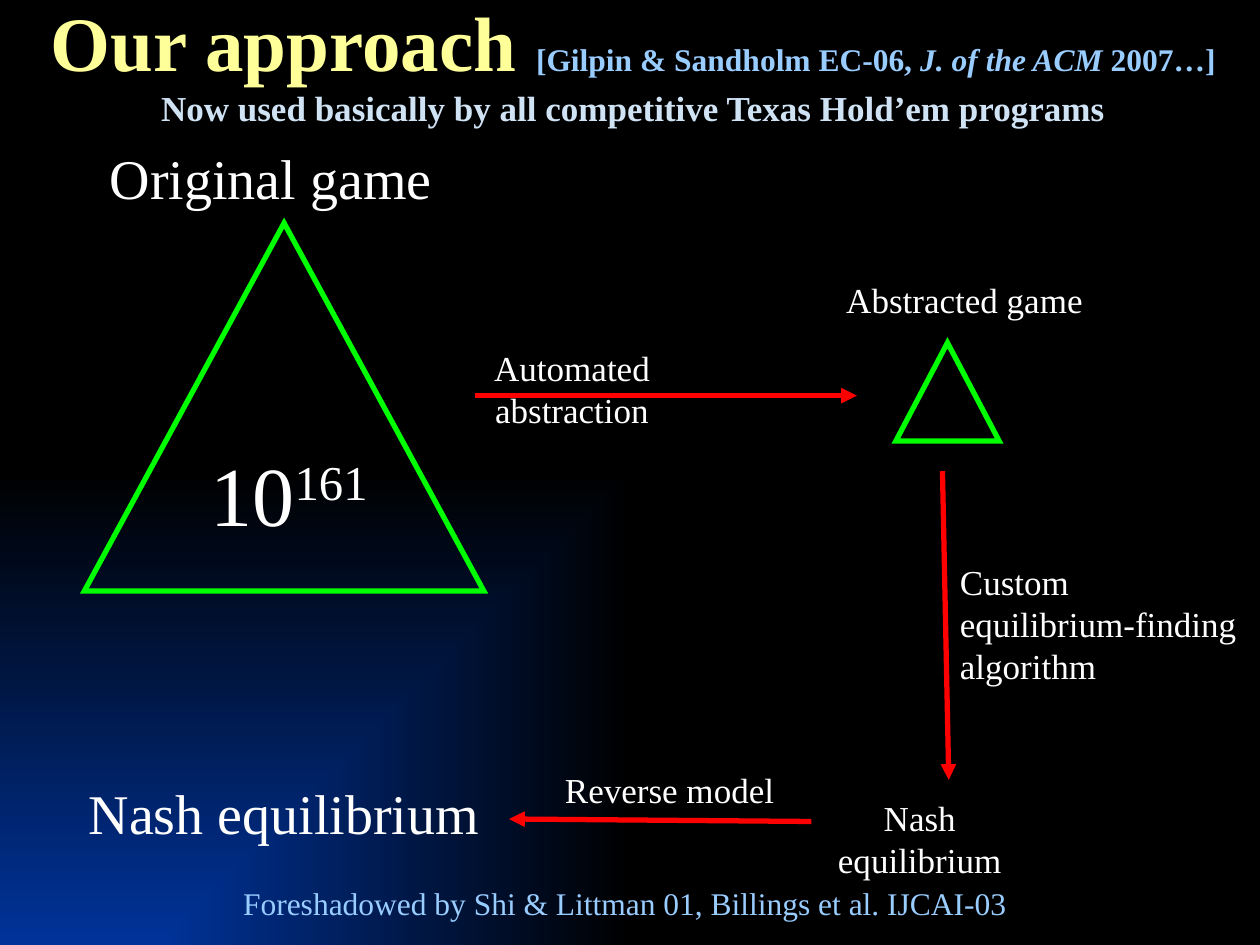
from lxml.etree import SubElement
from pptx import Presentation
from pptx.dml.color import RGBColor
from pptx.enum.shapes import MSO_CONNECTOR, MSO_SHAPE
from pptx.enum.text import MSO_ANCHOR, MSO_AUTO_SIZE, PP_ALIGN
from pptx.oxml.ns import qn
from pptx.util import Inches, Pt

FONT = "Times New Roman"
COLORS = {
    "navy": "003399",
    "black": "000000",
    "white": "FFFFFF",
    "title": "FFFF99",
    "citation": "99CCFF",
    "subtitle": "D0E3F5",
    "game": "00FF00",
    "arrow": "FF0000",
}


def rgb(name):
    return RGBColor.from_string(COLORS[name])


def set_font(font, size, color, bold=False):
    font.name = FONT
    font.size = Pt(size)
    font.bold = bold
    font.color.rgb = rgb(color)


def set_background(slide):
    fill = slide.background.fill
    fill.gradient()
    for stop, color, position in zip(fill.gradient_stops, ("navy", "black"), (0, 1)):
        stop.color.rgb = rgb(color)
        stop.position = position
    gradient = slide._element.find(".//" + qn("a:gradFill"))
    gradient.remove(gradient.find(qn("a:lin")))
    shade = SubElement(gradient, qn("a:path"), path="rect")
    SubElement(shade, qn("a:fillToRect"), t="100000", r="100000")


def add_title(slide):
    frame = slide.shapes.add_textbox(
        Inches(0.25), Inches(0.08), Inches(9.55), Inches(0.82)
    ).text_frame
    frame.word_wrap = True
    frame.vertical_anchor = MSO_ANCHOR.MIDDLE
    paragraph = frame.paragraphs[0]
    paragraph.alignment = PP_ALIGN.CENTER
    pieces = [
        ("Our approach ", 44, "title", False),
        ("[Gilpin & Sandholm EC-06, ", 18, "citation", False),
        ("J. of the ACM ", 18, "citation", True),
        ("2007…]", 18, "citation", False),
        ("Now used basically by all competitive Texas Hold’em programs", 20, "subtitle", False),
    ]
    for text, size, color, italic in pieces:
        if color == "subtitle":
            paragraph.add_line_break()
        run = paragraph.add_run()
        run.text = text
        set_font(run.font, size, color, bold=True)
        run.font.italic = italic


def add_label(slide, text, box, size=20, color="white", align=PP_ALIGN.CENTER, wrap=False):
    frame = slide.shapes.add_textbox(*map(Inches, box)).text_frame
    frame.text = text
    frame.word_wrap = wrap
    frame.auto_size = MSO_AUTO_SIZE.SHAPE_TO_FIT_TEXT
    for paragraph in frame.paragraphs:
        paragraph.alignment = align
        set_font(paragraph.font, size, color)
    return frame


def add_game_size(slide):
    frame = add_label(slide, "10", (1.52, 3.46, 1.55, 0.91), size=48)
    exponent = frame.paragraphs[0].add_run()
    exponent.text = "161"
    exponent.font._element.set("baseline", "30000")


def add_game_triangle(slide, box):
    shape = slide.shapes.add_shape(MSO_SHAPE.ISOSCELES_TRIANGLE, *map(Inches, box))
    shape.shadow.inherit = False
    shape.fill.background()
    shape.line.color.rgb = rgb("game")
    shape.line.width = Pt(3)
    SubElement(shape.line._get_or_add_ln(), qn("a:miter"), lim="800000")


def add_arrow(slide, start, end):
    connector = slide.shapes.add_connector(
        MSO_CONNECTOR.STRAIGHT, *map(Inches, start + end)
    )
    connector.line.color.rgb = rgb("arrow")
    connector.line.width = Pt(3)
    SubElement(connector.line._get_or_add_ln(), qn("a:tailEnd"), type="triangle")
    SubElement(connector._element.spPr, qn("a:effectLst"))


def main():
    presentation = Presentation()
    presentation.slide_width = Inches(10)
    presentation.slide_height = Inches(7.5)
    slide = presentation.slides.add_slide(presentation.slide_layouts[6])
    set_background(slide)
    add_title(slide)

    add_game_triangle(slide, (0.67, 1.77, 3.17, 2.92))
    add_game_triangle(slide, (7.11, 2.72, 0.82, 0.78))

    add_label(slide, "Original game", (0.77, 1.09, 2.76, 0.63), size=32)
    add_label(slide, "Nash equilibrium", (0.59, 6.13, 3.33, 0.64), size=32)
    add_label(slide, "Abstracted game", (6.61, 2.16, 2.09, 0.44))
    add_label(slide, "Automated abstraction", (3.74, 2.7, 1.6, 0.77), wrap=True)
    add_label(slide, "Custom\nequilibrium-finding\nalgorithm", (7.52, 4.4, 2.48, 1.11),
              align=PP_ALIGN.LEFT)
    add_label(slide, "Nash equilibrium", (6.55, 6.27, 1.5, 0.77), wrap=True)
    add_label(slide, "Reverse model", (4.38, 6.05, 1.87, 0.44))

    add_arrow(slide, (3.77, 3.14), (6.8, 3.14))
    add_arrow(slide, (7.48, 3.74), (7.53, 6.19))
    add_arrow(slide, (6.44, 6.52), (4.04, 6.5))

    add_label(slide, "Foreshadowed by Shi & Littman 01, Billings et al. IJCAI-03",
              (1.8, 6.97, 6.32, 0.4), size=18, color="citation")
    add_game_size(slide)
    presentation.save("out.pptx")


if __name__ == "__main__":
    main()
